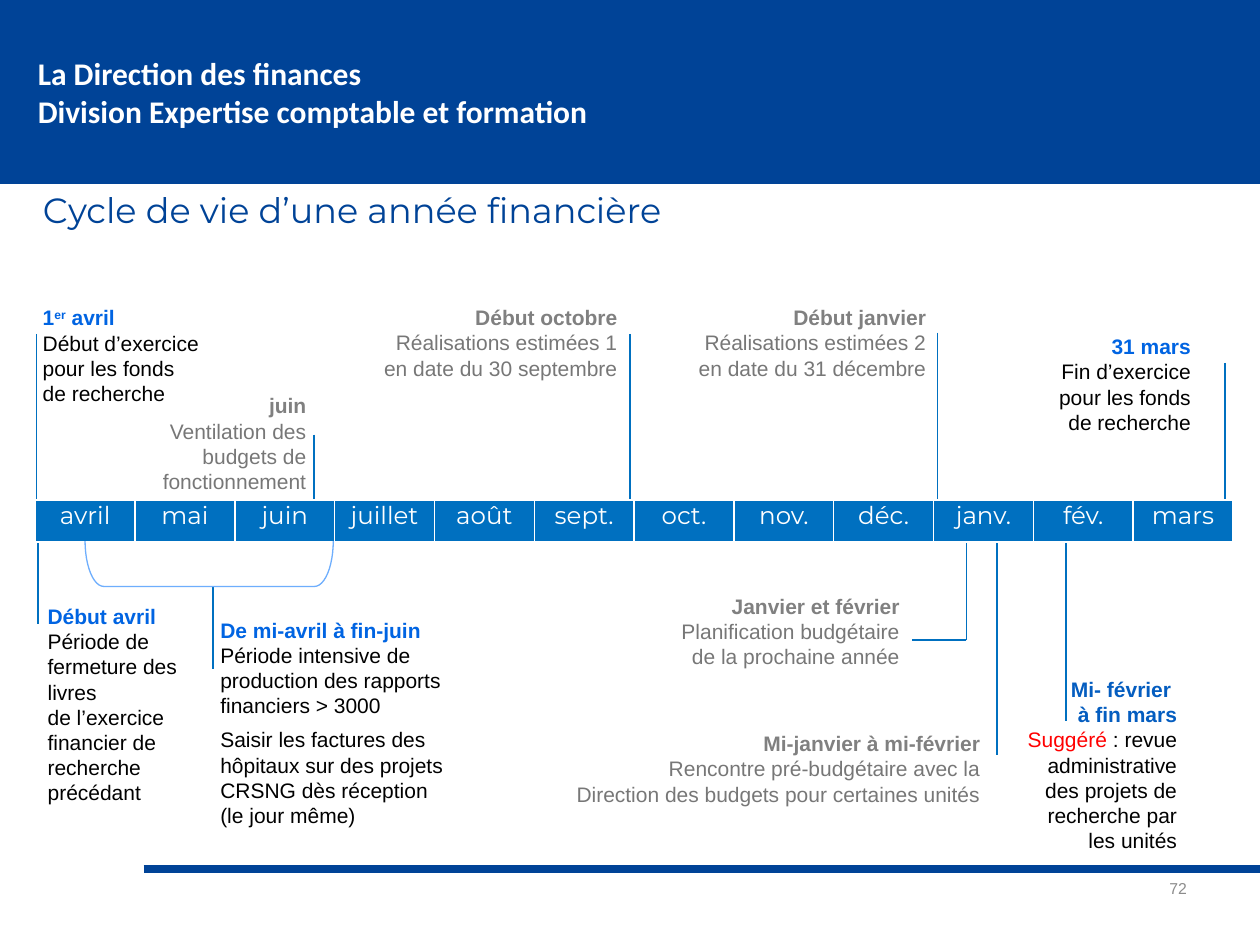
from lxml import etree
from pptx import Presentation
from pptx.dml.color import RGBColor
from pptx.enum.shapes import MSO_CONNECTOR, MSO_SHAPE
from pptx.enum.text import MSO_ANCHOR, MSO_AUTO_SIZE, PP_ALIGN
from pptx.oxml.ns import qn
from pptx.util import Inches, Pt

LEFT, CENTER, RIGHT = PP_ALIGN.LEFT, PP_ALIGN.CENTER, PP_ALIGN.RIGHT
MIDDLE, TOP = MSO_ANCHOR.MIDDLE, MSO_ANCHOR.TOP
GROW = MSO_AUTO_SIZE.SHAPE_TO_FIT_TEXT
STRAIGHT = MSO_CONNECTOR.STRAIGHT

NAVY, BLUE, SKY = "004397", "0070C0", "6EAEFD"
ACCENT, DEEP, RED = "0064E2", "045DC0", "FF0000"
BLACK, WHITE, GREY, MID_GREY = "000000", "FFFFFF", "808080", "777777"

MONTHS = ["avril", "mai", "juin", "juillet", "août", "sept.",
          "oct.", "nov.", "déc.", "janv.", "fév.", "mars"]

# Left, top, width, height, wrap, alignment, heading colour, heading, body colour, body lines
EVENTS = [
    (0.67, 3.07, 1.86, 1.14, True, RIGHT, GREY, "juin",
     MID_GREY, ["Ventilation des budgets de fonctionnement"]),
    (2.93, 2.37, 2.07, 0.94, False, RIGHT, GREY, "Début octobre",
     MID_GREY, ["Réalisations estimées 1\nen date du 30 septembre"]),
    (5.43, 2.37, 2.02, 0.94, False, RIGHT, GREY, "Début janvier",
     MID_GREY, ["Réalisations estimées 2\nen date du 31 décembre"]),
    (5.3, 4.66, 1.94, 0.71, False, RIGHT, GREY, "Janvier et février",
     MID_GREY, ["Planification budgétaire", "de la prochaine année"]),
    (4.45, 5.75, 3.43, 0.71, False, RIGHT, GREY, "Mi-janvier à mi-février",
     MID_GREY, ["Rencontre pré-budgétaire avec la",
                "Direction des budgets pour certaines unités"]),
    (8.23, 2.6, 1.32, 0.91, True, RIGHT, ACCENT, "31 mars",
     BLACK, ["Fin d’exercice", "pour les fonds", "de recherche"]),
    (0.28, 4.74, 1.33, 1.72, True, LEFT, ACCENT, "Début avril",
     BLACK, ["Période de fermeture des livres\n"
             "de l’exercice financier de recherche précédant"]),
    (1.65, 4.85, 2.09, 0.91, True, LEFT, ACCENT, "De mi-avril à fin-juin",
     BLACK, ["Période intensive de production des rapports financiers > 3000"]),
]

# x1, y1, x2, y2
MARKERS = [
    (2.49, 3.45, 2.49, 4), (5, 2.65, 5, 4.13), (7.44, 2.64, 7.44, 4.12),
    (9.72, 2.88, 9.72, 4.03), (0.29, 2.65, 0.29, 4.13), (0.3, 4.3, 0.3, 4.95),
    (1.69, 4.66, 1.69, 5.31), (7.67, 4.22, 7.67, 5.08), (7.67, 5.08, 7.24, 5.08),
    (7.91, 4.3, 7.91, 5.99), (8.46, 4.3, 8.46, 5.72),
]


def rgb(color):
    return RGBColor.from_string(color)


def add_run(p, text, size=12, font="Arial", color=BLACK, bold=False, baseline=None):
    for i, line in enumerate(text.split("\n")):
        if i:
            p.add_line_break()
        r = p.add_run()
        r.text = line
        r.font.size, r.font.name, r.font.bold = Pt(size), font, bold
        r.font.color.rgb = rgb(color)
        if baseline:
            r._r.get_or_add_rPr().set("baseline", str(baseline))


def write(tf, paragraphs, align=LEFT, spacing=None, before=0, after=0, **fmt):
    """Each paragraph is a list of (text, format overrides) runs."""
    for i, runs in enumerate(paragraphs):
        p = tf.paragraphs[0] if i == 0 else tf.add_paragraph()
        p.alignment, p.line_spacing = align, spacing
        p.space_before, p.space_after = Pt(before), Pt(after)
        for text, extra in runs:
            add_run(p, text, **{**fmt, **extra})


def set_frame(tf, wrap=True, anchor=TOP, auto_size=GROW, margins=(0.1, 0.05, 0.1, 0.05)):
    tf.word_wrap, tf.vertical_anchor, tf.auto_size = wrap, anchor, auto_size
    tf.margin_left, tf.margin_top, tf.margin_right, tf.margin_bottom = map(Inches, margins)


def add_text(s, box, paragraphs, wrap=True, **fmt):
    tf = s.shapes.add_textbox(*map(Inches, box)).text_frame
    set_frame(tf, wrap)
    write(tf, paragraphs, **fmt)
    return tf


def add_line(s, ends, color=BLUE, width=1):
    line = s.shapes.add_connector(STRAIGHT, *map(Inches, ends))
    line.line.color.rgb, line.line.width = rgb(color), Pt(width)
    etree.SubElement(line._element.spPr, qn("a:effectLst"))


def add_shape(s, kind, box):
    sp = s.shapes.add_shape(kind, *map(Inches, box))
    sp.shadow.inherit = False
    return sp


def add_banner(s):
    sp = add_shape(s, MSO_SHAPE.RECTANGLE, (0, 0, 10, 1.46))
    sp.fill.solid()
    sp.fill.fore_color.rgb = rgb(NAVY)
    sp.line.fill.background()
    set_frame(sp.text_frame, anchor=MIDDLE, auto_size=MSO_AUTO_SIZE.NONE,
              margins=(0.3, 0.05, 0.1, 0.05))
    write(sp.text_frame, [[("La Direction des finances", {})],
                          [("Division Expertise comptable et formation", {})]],
          size=18, font="Calibri", color=WHITE, bold=True)


def add_title(s):
    sp = s.shapes.title
    sp.left, sp.top, sp.width, sp.height = map(Inches, (0.24, 1.51, 7.28, 0.38))
    set_frame(sp.text_frame)
    write(sp.text_frame, [[("Cycle de vie d’une année financière", {})]],
          spacing=0.8, before=12, after=12, size=20, font="Montserrat", color=NAVY)


def set_borders(cell, color, width):
    tcPr = cell._tc.get_or_add_tcPr()
    for i, side in enumerate(("lnL", "lnR", "lnT", "lnB")):
        ln = etree.Element(qn(f"a:{side}"), w=str(Pt(width)))
        fill = etree.SubElement(ln, qn("a:solidFill"))
        etree.SubElement(fill, qn("a:srgbClr"), val=color)
        tcPr.insert(i, ln)


def add_months(s):
    box = map(Inches, (0.28, 3.97, 9.51, 0.33))
    table = s.shapes.add_table(1, len(MONTHS), *box).table
    for cell, month in zip(table.rows[0].cells, MONTHS):
        cell.fill.solid()
        cell.fill.fore_color.rgb = rgb(BLUE)
        cell.vertical_anchor = MIDDLE
        cell.margin_left = cell.margin_right = Inches(0.05)
        cell.margin_top = cell.margin_bottom = 0
        write(cell.text_frame, [[(month, {})]], align=CENTER, spacing=Pt(11.5),
              after=9, size=14, font="Montserrat", color=WHITE)
        set_borders(cell, WHITE, 1)


def add_bracket(s):
    sp = add_shape(s, MSO_SHAPE.RIGHT_BRACKET, (1.48, 3.49, 0.36, 1.97))
    sp.rotation = 90
    sp.adjustments[0] = 0.415
    sp.fill.background()
    sp.line.color.rgb, sp.line.width = rgb(SKY), Pt(0.75)


def add_events(s):
    for *box, wrap, align, head_color, head, color, lines in EVENTS:
        paragraphs = [[(head, {"color": head_color, "bold": True})]]
        paragraphs += [[(line, {})] for line in lines]
        add_text(s, box, paragraphs, wrap=wrap, align=align, color=color)

    # Notes with mixed formatting
    head = {"color": ACCENT, "bold": True}
    add_text(s, (0.24, 2.37, 1.45, 0.91),
             [[("1", head), ("er", {**head, "baseline": 30000}), (" avril", head)],
              [("Début d’exercice", {})], [("pour les fonds", {})], [("de recherche", {})]],
             wrap=False)
    add_text(s, (7.99, 5.32, 1.45, 1.51),
             [[("Mi- février \nà fin mars", {"color": DEEP, "bold": True})],
              [("Suggéré", {"color": RED}),
               (" : revue administrative des projets de recherche par les unités", {})]],
             align=RIGHT)
    add_text(s, (1.65, 5.72, 2.09, 0.91),
             [[("Saisir les factures des hôpitaux sur des projets CRSNG dès réception \n"
                "(le jour même)", {})]])


def add_page_number(s):
    tf = add_text(s, (8.94, 6.98, 0.48, 0.2), [[("72", {})]],
                  align=RIGHT, spacing=0.5, size=9, color="8C8C8C")
    set_frame(tf, anchor=MIDDLE, auto_size=MSO_AUTO_SIZE.NONE, margins=(0, 0, 0, 0))


def main():
    prs = Presentation()
    prs.slide_width, prs.slide_height = Inches(10), Inches(7.5)
    s = prs.slides.add_slide(prs.slide_layouts[5])
    # Page frame
    add_banner(s)
    add_line(s, (1.14, 6.9, 10, 6.9), NAVY, 4.5)
    add_title(s)
    add_page_number(s)
    # Timeline: markers run behind the month band
    for ends in MARKERS:
        add_line(s, ends)
    add_months(s)
    add_bracket(s)
    add_events(s)
    prs.save("out.pptx")


if __name__ == "__main__":
    main()
